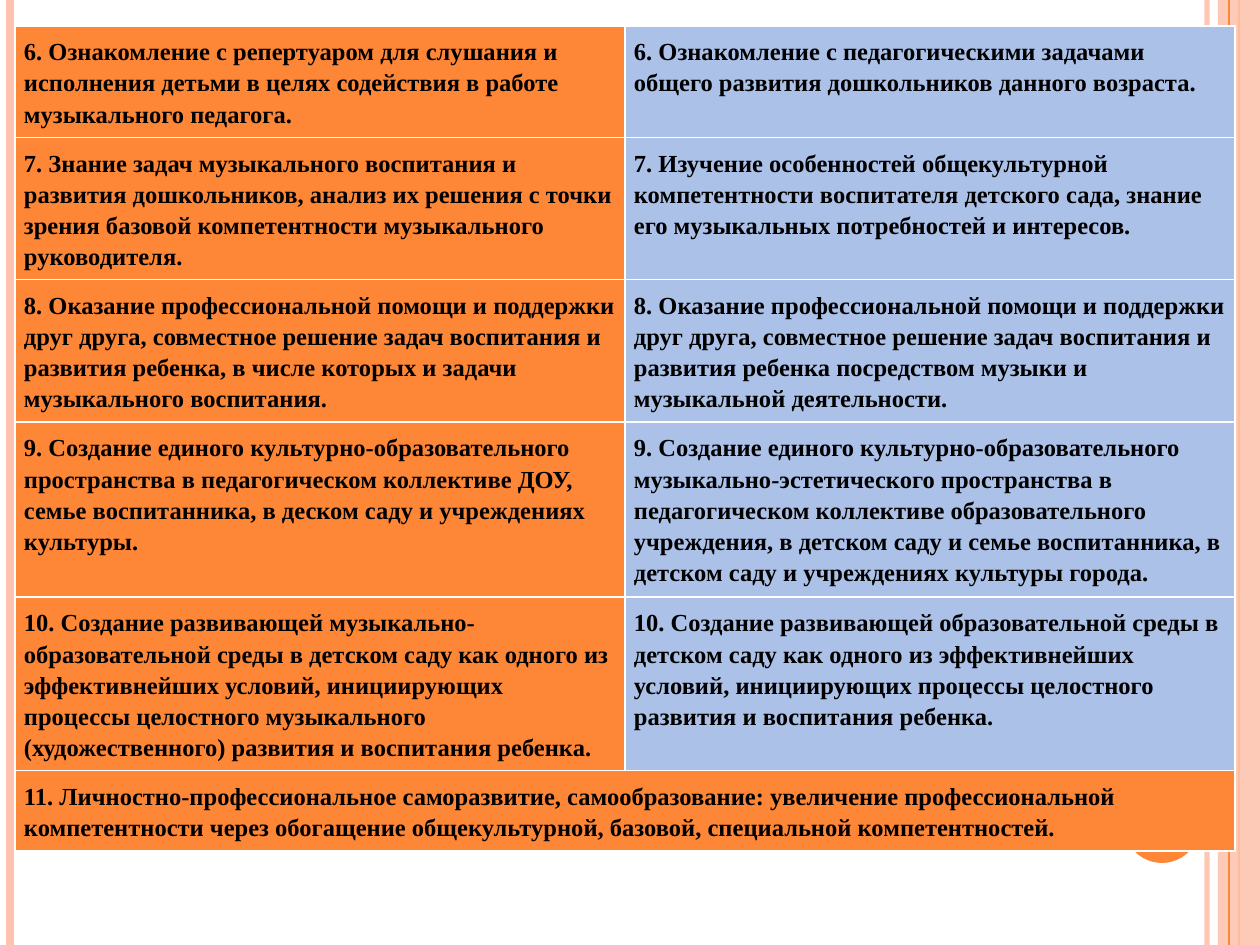
from lxml import etree
from pptx import Presentation
from pptx import util as u
from pptx.dml.color import RGBColor
from pptx.enum import shapes
from pptx.oxml.ns import qn

WIDTH, HEIGHT = 1260, 945
ORANGE, PEACH, BLUE, BLACK = "FE8637", "FEC3AE", "ACC1E8", "000000"
FONT, SIZE, SPACING = "Times New Roman", 14, 1.15
TABLE_LEFT, TABLE_TOP, COLUMN, INSET = 15, 26, 610, 9

ROWS = [
    (96, "6. Ознакомление с репертуаром для слушания и исполнения детьми в целях содействия в работе музыкального педагога.",
     "6. Ознакомление с педагогическими задачами общего развития дошкольников данного возраста."),
    (122, "7. Знание задач музыкального воспитания и развития дошкольников, анализ их решения с точки зрения базовой компетентности музыкального руководителя.",
     "7. Изучение особенностей общекультурной компетентности воспитателя детского сада, знание его музыкальных потребностей и интересов."),
    (122, "8. Оказание профессиональной помощи и поддержки друг друга, совместное решение задач воспитания и развития ребенка, в числе которых и задачи музыкального воспитания.",
     "8. Оказание профессиональной помощи и поддержки друг друга, совместное решение задач воспитания и развития ребенка посредством музыки и музыкальной деятельности."),
    (175, "9. Создание единого культурно-образовательного пространства в педагогическом коллективе ДОУ, семье воспитанника, в деском саду и учреждениях культуры.",
     "9. Создание единого культурно-образовательного музыкально-эстетического пространства в педагогическом коллективе образовательного учреждения, в детском саду и семье воспитанника, в детском саду и учреждениях культуры города."),
    (160, "10. Создание развивающей музыкально-образовательной среды в детском саду как одного из эффективнейших условий, инициирующих процессы целостного музыкального (художественного) развития и воспитания ребенка.",
     "10. Создание развивающей образовательной среды в детском саду как одного из эффективнейших условий, инициирующих процессы целостного развития и воспитания ребенка."),
    (78, "11. Личностно-профессиональное саморазвитие, самообразование: увеличение профессиональной компетентности через обогащение общекультурной, базовой, специальной компетентностей."),
]


def px(n):
    return u.Emu(round(n * 914400 / 126))


def rgb(color):
    return RGBColor.from_string(color)


def set_alpha(fill, percent):
    color = fill._xPr.find(qn("a:solidFill"))[0]
    etree.SubElement(color, qn("a:alpha"), val=str(percent * 1000))


def add_stripe(s, x, color, width, alpha=100):
    line = s.shapes.add_connector(shapes.MSO_CONNECTOR.STRAIGHT, px(x), 0, px(x), px(HEIGHT))
    line.line.color.rgb = rgb(color)
    line.line.width = u.Pt(width)
    if alpha < 100:
        set_alpha(line.line.fill, alpha)
    etree.SubElement(line._element.spPr, qn("a:effectLst"))


def add_plain(s, kind, left, top, width, height, color, alpha=100):
    sp = s.shapes.add_shape(kind, px(left), px(top), px(width), px(height))
    sp.shadow.inherit = False
    sp.fill.solid()
    sp.fill.fore_color.rgb = rgb(color)
    if alpha < 100:
        set_alpha(sp.fill, alpha)
    sp.line.fill.background()


def fill_cell(cell, content, color):
    cell.fill.solid()
    cell.fill.fore_color.rgb = rgb(color)
    cell.margin_left = cell.margin_right = px(INSET)
    cell.margin_top = cell.margin_bottom = px(INSET)
    cell.text_frame.text = content
    p = cell.text_frame.paragraphs[0]
    p.line_spacing = SPACING
    for r in p.runs:
        r.font.name = FONT
        r.font.size = u.Pt(SIZE)
        r.font.bold = True
        r.font.color.rgb = rgb(BLACK)


def add_tasks_table(s):
    total = sum(row[0] for row in ROWS)
    table = s.shapes.add_table(len(ROWS), 2, px(TABLE_LEFT), px(TABLE_TOP),
                               px(2 * COLUMN), px(total)).table
    for column in table.columns:
        column.width = px(COLUMN)
    for i, (height, *contents) in enumerate(ROWS):
        table.rows[i].height = px(height)
        if len(contents) == 1:
            table.cell(i, 0).merge(table.cell(i, 1))
        for j, content in enumerate(contents):
            fill_cell(table.cell(i, j), content, (ORANGE, BLUE)[j])


def main():
    prs = Presentation()
    prs.slide_width, prs.slide_height = px(WIDTH), px(HEIGHT)
    s = prs.slides.add_slide(prs.slide_layouts[6])
    add_stripe(s, 1207, PEACH, 3, 93)
    add_stripe(s, 10, PEACH, 4.5)
    add_stripe(s, 1239, ORANGE, 1.5)
    add_plain(s, shapes.MSO_SHAPE.RECTANGLE, 1218, 0, 42, HEIGHT, PEACH, 87)
    add_stripe(s, 1229, ORANGE, 0.75)
    add_plain(s, shapes.MSO_SHAPE.OVAL, 1124, 787, 76, 76, ORANGE)
    add_tasks_table(s)
    prs.save("out.pptx")


if __name__ == "__main__":
    main()
